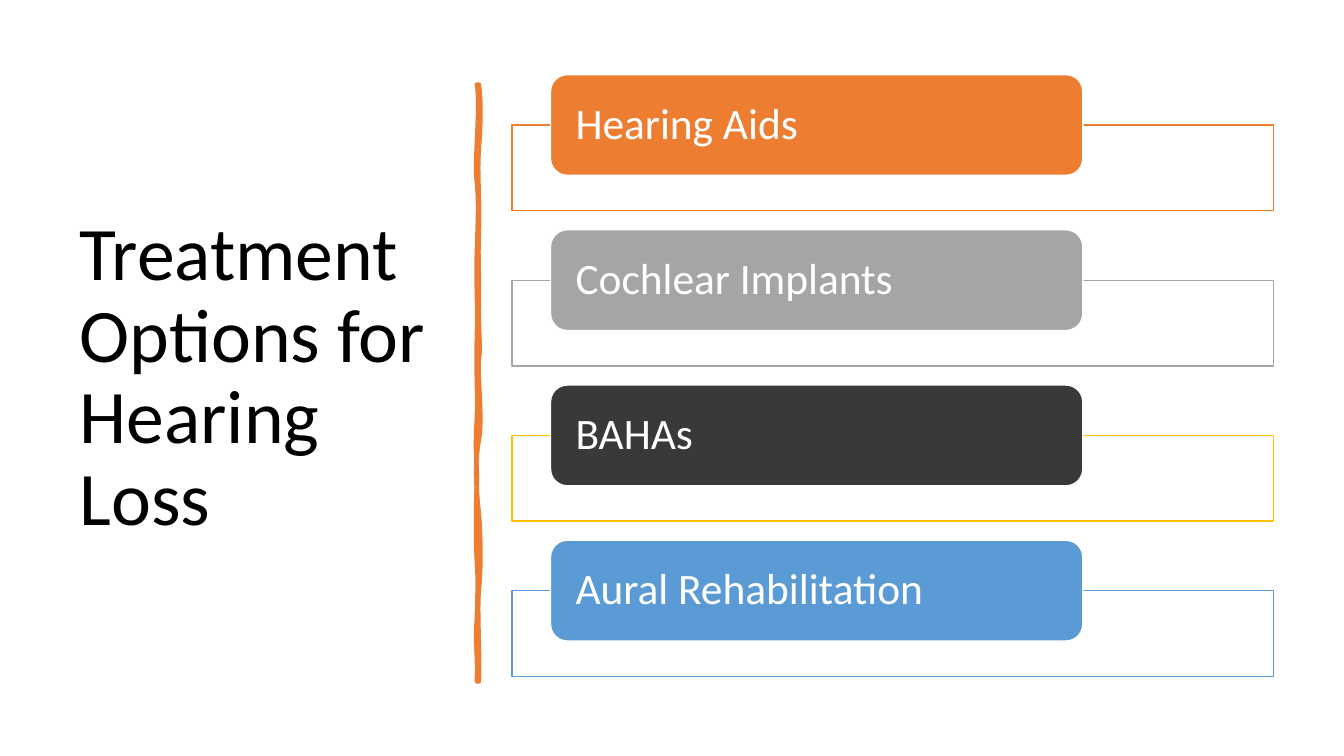
from dataclasses import dataclass

from lxml import etree
from pptx import Presentation
from pptx.dml.color import RGBColor
from pptx.enum.shapes import MSO_SHAPE
from pptx.enum.text import MSO_ANCHOR, MSO_AUTO_SIZE, PP_ALIGN
from pptx.oxml.ns import qn
from pptx.util import Inches, Pt

RECTANGLE = MSO_SHAPE.RECTANGLE
ROUNDED = MSO_SHAPE.ROUNDED_RECTANGLE
MIDDLE = MSO_ANCHOR.MIDDLE
LEFT = PP_ALIGN.LEFT
NO_AUTO_SIZE = MSO_AUTO_SIZE.NONE
TITLE_ONLY = 5


@dataclass(frozen=True)
class Theme:
    font: str = "Calibri"
    black: str = "000000"
    white: str = "FFFFFF"
    orange: str = "ED7D31"
    gray: str = "A5A5A5"
    gold: str = "FFC000"
    charcoal: str = "3B3838"
    blue: str = "5B9BD5"
    title_size: int = 54
    label_size: int = 31
    outline: float = 1
    stroke: float = 3.25


THEME = Theme()

# Label, label fill, frame outline
OPTIONS = [
    ("Hearing Aids", THEME.orange, THEME.orange),
    ("Cochlear Implants", THEME.gray, THEME.gray),
    ("BAHAs", THEME.charcoal, THEME.gold),
    ("Aural Rehabilitation", THEME.blue, THEME.blue),
]
FIRST_TOP = 0.74
ROW_PITCH = 1.54
FRAME_DROP = 0.5

# Hand-drawn divider: start, then cubic curves (control, control, end)
DIVIDER_START = (4.75, 0.84)
DIVIDER_CURVES = [
    ((4.77, 1.02), (4.77, 1.19), (4.75, 1.46)),
    ((4.73, 1.73), (4.76, 1.95), (4.75, 2.26)),
    ((4.74, 2.57), (4.75, 2.62), (4.75, 2.94)),
    ((4.74, 3.25), (4.77, 3.42), (4.75, 3.56)),
    ((4.73, 3.7), (4.79, 4.14), (4.75, 4.36)),
    ((4.71, 4.57), (4.72, 4.84), (4.75, 5.1)),
    ((4.77, 5.36), (4.77, 5.64), (4.75, 5.84)),
    ((4.73, 6.03), (4.76, 6.5), (4.75, 6.76)),
    ((4.74, 6.76), (4.73, 6.76), (4.73, 6.76)),
    ((4.74, 6.46), (4.71, 6.44), (4.73, 6.13)),
    ((4.74, 5.83), (4.74, 5.7), (4.73, 5.57)),
    ((4.72, 5.44), (4.72, 4.95), (4.73, 4.77)),
    ((4.73, 4.59), (4.71, 4.45), (4.73, 4.15)),
    ((4.74, 3.86), (4.72, 3.73), (4.73, 3.35)),
    ((4.74, 2.98), (4.72, 2.81), (4.73, 2.5)),
    ((4.74, 2.18), (4.75, 2), (4.73, 1.81)),
    ((4.7, 1.63), (4.77, 1.04), (4.73, 0.84)),
]


def color(value):
    return RGBColor.from_string(value)


def paint(shape, fill, line, width):
    shape.shadow.inherit = False
    shape.fill.solid()
    shape.fill.fore_color.rgb = color(fill)
    shape.line.color.rgb = color(line)
    shape.line.width = Pt(width)


def write(shape, text, size, text_color):
    frame = shape.text_frame
    frame.text = text
    frame.word_wrap = True
    frame.auto_size = NO_AUTO_SIZE
    frame.vertical_anchor = MIDDLE
    paragraph = frame.paragraphs[0]
    paragraph.alignment = LEFT
    paragraph.line_spacing = 0.9
    font = paragraph.runs[0].font
    font.name = THEME.font
    font.size = Pt(size)
    font.color.rgb = color(text_color)


def add_title(slide, text):
    title = slide.shapes.title
    title.left, title.top = Inches(0.69), Inches(0.7)
    title.width, title.height = Inches(3.74), Inches(6.11)
    write(title, text, THEME.title_size, THEME.black)


def bend_segments(shape):
    """Turn every three line segments into one cubic curve."""
    segments = list(shape.element.iter(qn("a:lnTo")))
    for index in range(0, len(segments) - 2, 3):
        curve = etree.Element(qn("a:cubicBezTo"))
        segments[index].addprevious(curve)
        for segment in segments[index:index + 3]:
            curve.append(segment[0])
            segment.getparent().remove(segment)


def add_divider(slide):
    left, top = DIVIDER_START
    builder = slide.shapes.build_freeform(Inches(left), Inches(top))
    builder.add_line_segments(
        [(Inches(x), Inches(y)) for curve in DIVIDER_CURVES for x, y in curve])
    divider = builder.convert_to_shape()
    bend_segments(divider)
    paint(divider, THEME.orange, THEME.orange, THEME.stroke)


def add_option(slide, top, text, fill, outline):
    # Wide frame behind the label
    frame = slide.shapes.add_shape(
        RECTANGLE, Inches(5.08), Inches(top + FRAME_DROP), Inches(7.55), Inches(0.85))
    paint(frame, THEME.white, outline, THEME.outline)

    # Rounded label overlapping the frame
    label = slide.shapes.add_shape(
        ROUNDED, Inches(5.46), Inches(top), Inches(5.28), Inches(1))
    paint(label, fill, THEME.white, THEME.outline)
    write(label, text, THEME.label_size, THEME.white)
    text_frame = label.text_frame
    text_frame.margin_left = text_frame.margin_right = Inches(0.2)
    text_frame.margin_top = text_frame.margin_bottom = 0


def main():
    presentation = Presentation()
    presentation.slide_width = Inches(13.33)
    presentation.slide_height = Inches(7.5)
    slide = presentation.slides.add_slide(presentation.slide_layouts[TITLE_ONLY])

    add_title(slide, "Treatment Options for Hearing Loss")
    add_divider(slide)
    for row, option in enumerate(OPTIONS):
        add_option(slide, FIRST_TOP + row * ROW_PITCH, *option)

    presentation.save("out.pptx")


if __name__ == "__main__":
    main()
